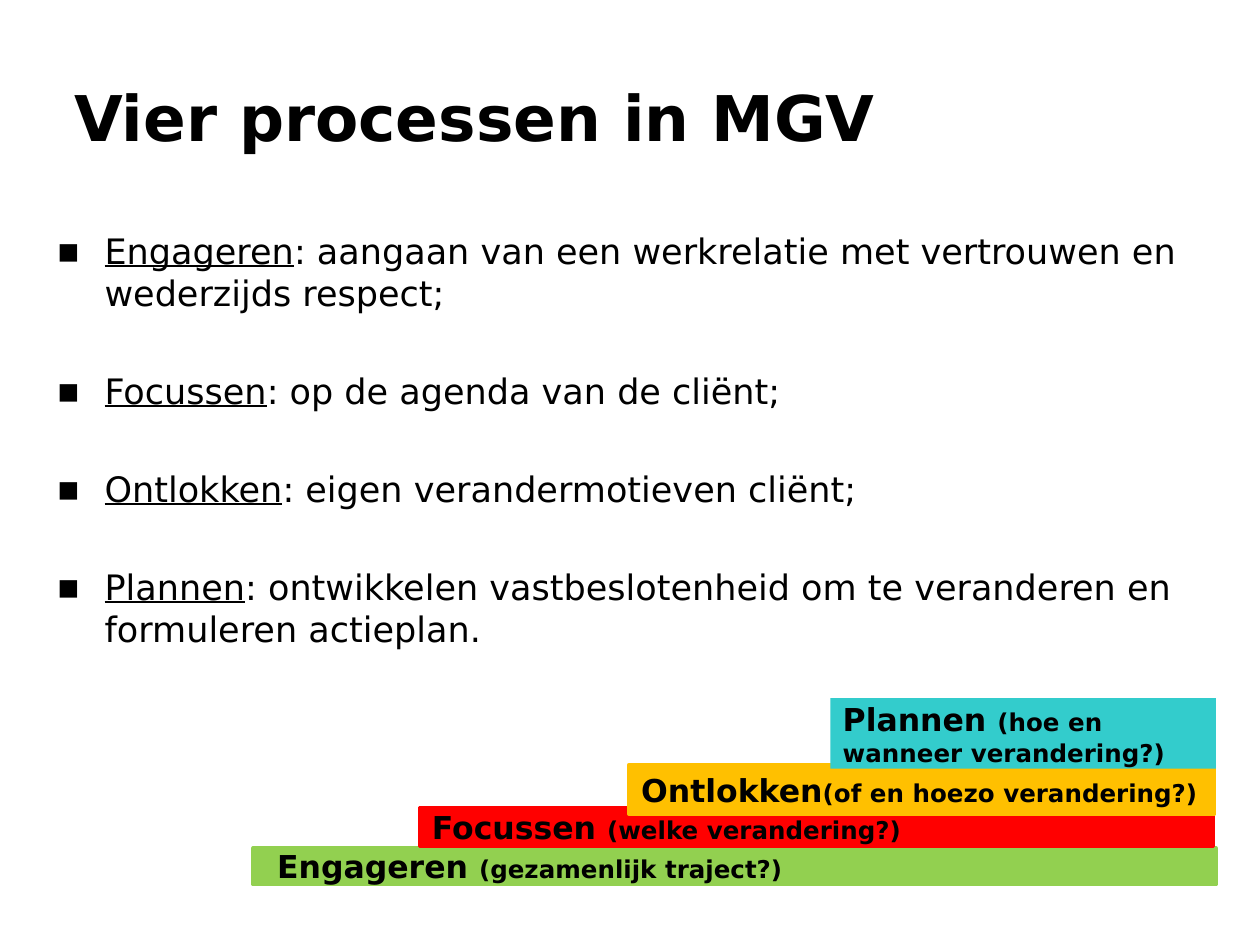
from dataclasses import dataclass

from lxml.etree import SubElement
from pptx import Presentation
from pptx.dml.color import RGBColor as RGB
from pptx.enum.shapes import MSO_SHAPE as Preset
from pptx.enum.text import MSO_ANCHOR as Anchor, MSO_AUTO_SIZE as AutoSize, PP_ALIGN as Align
from pptx.oxml.ns import qn
from pptx.util import Inches, Pt


@dataclass(frozen=True)
class Theme:
    font: str = "DejaVu Sans"
    ink: RGB = RGB(0, 0, 0)
    green: RGB = RGB(0x92, 0xD0, 0x50)
    red: RGB = RGB(0xFF, 0, 0)
    amber: RGB = RGB(0xFF, 0xC0, 0)
    teal: RGB = RGB(0x33, 0xCC, 0xCC)
    title_size: int = 36
    body_size: int = 20
    step_size: int = 18
    question_size: int = 14
    body_gap: int = 32


@dataclass(frozen=True)
class Step:
    name: str
    question: str
    box: tuple[float, float, float, float]
    color: RGB
    outlined: bool = True
    inset: float = 0.1


@dataclass(frozen=True)
class Process:
    name: str
    meaning: str


THEME = Theme()

PROCESSES = [
    Process("Engageren", ": aangaan van een werkrelatie met vertrouwen en wederzijds respect;"),
    Process("Focussen", ": op de agenda van de cliënt;"),
    Process("Ontlokken", ": eigen verandermotieven cliënt;"),
    Process("Plannen", ": ontwikkelen vastbeslotenheid om te veranderen en formuleren actieplan."),
]

STEPS = [
    Step("Engageren ", "(gezamenlijk traject?)", (2.01, 6.73, 7.64, 0.29), THEME.green, inset=0.19),
    Step("Focussen ", "(welke verandering?)", (3.33, 6.41, 6.3, 0.31), THEME.red),
    Step("Ontlokken", "(of en hoezo verandering?)", (4.99, 6.07, 4.65, 0.39), THEME.amber),
    Step("Plannen ", "(hoe en wanneer verandering?)", (6.59, 5.54, 3.06, 0.56), THEME.teal, outlined=False),
]


def add_words(paragraph, words: str, size: int, **extra) -> None:
    run = paragraph.add_run()
    run.text = words
    run.font.color.rgb = THEME.ink
    for key, value in {"name": THEME.font, "size": Pt(size), **extra}.items():
        setattr(run.font, key, value)


def place(shape, left: float, top: float, width: float, height: float) -> None:
    box = {"left": left, "top": top, "width": width, "height": height}
    for key, value in box.items():
        setattr(shape, key, Inches(value))


def format_frame(frame, anchor: Anchor) -> None:
    settings = {"word_wrap": True, "auto_size": AutoSize.NONE, "vertical_anchor": anchor}
    for key, value in settings.items():
        setattr(frame, key, value)


def add_bullet(paragraph) -> None:
    props = paragraph._p.get_or_add_pPr()
    props.set("marL", str(Inches(0.38)))
    props.set("indent", str(-Inches(0.38)))
    SubElement(props, qn("a:buFont"), typeface=THEME.font)
    SubElement(props, qn("a:buChar"), char="▪")


def write_processes(frame, processes: list[Process]) -> None:
    for index, process in enumerate(processes):
        paragraph = frame.add_paragraph() if index else frame.paragraphs[0]
        paragraph.space_before = Pt(THEME.body_gap if index else 0)
        add_bullet(paragraph)
        add_words(paragraph, process.name, THEME.body_size, underline=True)
        add_words(paragraph, process.meaning, THEME.body_size)


def draw_step(slide, step: Step) -> None:
    bar = slide.shapes.add_shape(Preset.RECTANGLE, *map(Inches, step.box))
    bar.shadow.inherit = False
    bar.fill.solid()
    bar.fill.fore_color.rgb = step.color
    if step.outlined:
        bar.line.color.rgb = step.color
        bar.line.width = Pt(2)
    else:
        bar.line.fill.background()
    frame = bar.text_frame
    format_frame(frame, Anchor.MIDDLE)
    frame.margin_left = Inches(step.inset)
    paragraph = frame.paragraphs[0]
    paragraph.alignment = Align.LEFT
    add_words(paragraph, step.name, THEME.step_size, bold=True)
    add_words(paragraph, step.question, THEME.question_size, bold=True)


def main() -> None:
    deck = Presentation()
    deck.slide_width, deck.slide_height = Inches(10), Inches(7.5)
    slide = deck.slides.add_slide(deck.slide_layouts[1])

    # Title
    title = slide.shapes.title
    place(title, 0.49, 0.02, 9, 1.25)
    format_frame(title.text_frame, Anchor.BOTTOM)
    heading = title.text_frame.paragraphs[0]
    heading.alignment = Align.LEFT
    add_words(heading, "Vier processen in MGV", THEME.title_size, bold=True)

    # Staircase of processes, lowest step first
    for step in STEPS:
        draw_step(slide, step)

    # Explanation of each process
    body = slide.placeholders[1]
    place(body, 0.35, 1.77, 9.13, 4.48)
    format_frame(body.text_frame, Anchor.TOP)
    write_processes(body.text_frame, PROCESSES)

    deck.save("out.pptx")


if __name__ == "__main__":
    main()
